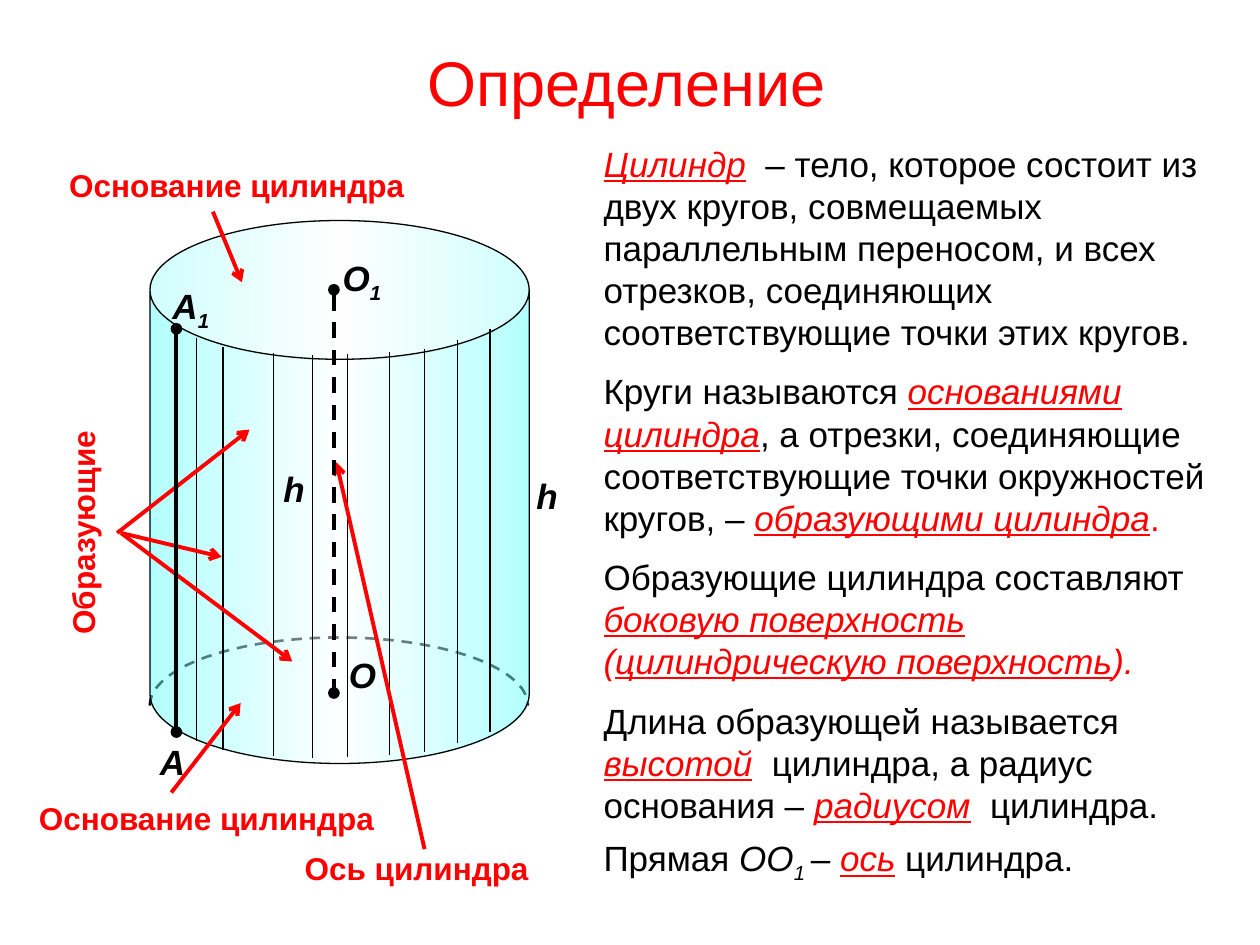
from math import cos, pi, sin

from lxml.etree import SubElement
from pptx import Presentation
from pptx.dml.color import RGBColor
from pptx.enum.dml import MSO_LINE
from pptx.enum.shapes import MSO_CONNECTOR, MSO_SHAPE
from pptx.enum.text import MSO_ANCHOR, MSO_AUTO_SIZE, PP_ALIGN
from pptx.oxml import parse_xml
from pptx.oxml.ns import nsdecls, qn
from pptx.util import Inches, Pt

THEME = {
    "font": "Arial",
    "red": RGBColor(0xFF, 0x00, 0x00),
    "black": RGBColor(0x00, 0x00, 0x00),
    "aqua": "66FFFF",
    "white": "FFFFFF",
    "title": 36, "body": 20, "label": 18,
    "thin": 0.75, "arc": 1.5, "thick": 2.25,
}

# ---- Content ----
TITLE = "Определение"

# Run styles used in the definitions
PLAIN = {}
TERM = {"color": "red", "italic": True, "underline": True}
RED = {"color": "red"}
RED_ITALIC = {"color": "red", "italic": True}
ITALIC = {"italic": True}
SUB_ITALIC = {"italic": True, "sub": True}

DEFINITIONS = [
    [("Цилиндр", TERM),
     ("  – тело, которое состоит из двух кругов, совмещаемых параллельным "
      "переносом, и всех отрезков, соединяющих соответствующие точки этих "
      "кругов.", PLAIN)],
    [("Круги называются ", PLAIN), ("основаниями цилиндра", TERM),
     (", а отрезки, соединяющие соответствующие точки окружностей кругов, – ",
      PLAIN),
     ("образующими цилиндра", TERM), (".", RED)],
    [("Образующие цилиндра составляют ", PLAIN),
     ("боковую поверхность ", TERM), ("(", RED_ITALIC),
     ("цилиндрическую поверхность", TERM), (").", RED_ITALIC)],
    [("Длина образующей называется ", PLAIN), ("высотой", TERM),
     ("  цилиндра, а радиус основания – ", PLAIN), ("радиусом", TERM),
     ("  цилиндра.", PLAIN)],
    [("Прямая ", PLAIN), ("ОО", ITALIC), ("1 ", SUB_ITALIC), ("– ", PLAIN),
     ("ось", TERM), (" цилиндра.", PLAIN)],
]

# Red captions: text, (left, top, width), rotation
CAPTIONS = [
    ("Основание цилиндра", (0.45, 1.27, 2.91), 0),
    ("Основание цилиндра", (0.21, 6.29, 3.15), 0),
    ("Образующие", (-0.32, 3.96, 1.95), 270),
    ("Ось цилиндра", (2.32, 6.69, 2.06), 0),
]

# Point and height names: letter, subscript, (left, top, width)
NAMES = [
    ("O", "1", (2.62, 1.99, 0.52)),
    ("O", "", (2.67, 5.14, 0.42)),
    ("А", "", (1.17, 5.83, 0.42)),
    ("А", "1", (1.27, 2.21, 0.52)),
    ("h", "", (4.16, 3.72, 0.37)),
    ("h", "", (2.15, 3.66, 0.37)),
]

# Pointers from a caption to its part of the cylinder
POINTERS = [
    ((1.69, 1.68), (1.92, 2.24)),
    ((1.36, 6.29), (1.91, 5.58)),
    ((0.96, 4.23), (1.76, 4.42)),
    ((0.96, 4.23), (2.32, 5.25)),
    ((0.93, 4.23), (1.98, 3.41)),
    ((3.37, 6.74), (2.67, 3.67)),
]

# Generatrices: x and top; all share one length
GENERATRICES = [(1.56, 2.68), (1.77, 2.75), (2.17, 2.8), (2.48, 2.82),
                (2.76, 2.81), (3.09, 2.79), (3.37, 2.77), (3.63, 2.7),
                (3.89, 2.61)]
HEIGHT = 3.2
CYLINDER = (1.19, 1.75, 3.01, 4.31)
ARC_CENTRE, ARC_RADII, ARC_STEPS = (2.69, 5.6), (1.5, 0.54), 60


# ---- Helpers ----
def inches(values):
    return [Inches(value) for value in values]


def add_span(para, text, size, color="black", sub=False, **style):
    span = para.add_run()
    span.text = text
    font = span.font
    for name, value in {"name": THEME["font"], "size": Pt(size), **style}.items():
        setattr(font, name, value)
    font.color.rgb = THEME[color]
    if sub:
        span._r.get_or_add_rPr().set("baseline", "-25000")


def add_label(page, place, height, spans, wrap, rotation=0, **style):
    left, top, width = place
    box = page.shapes.add_textbox(*inches((left, top, width, height)))
    box.rotation = rotation
    box.text_frame.word_wrap = wrap
    for text, sub in spans:
        add_span(box.text_frame.paragraphs[0], text, sub=sub, bold=True, **style)


def add_line(page, start, end, color="black", width="thin", dash=None,
             head=None, tail=None):
    line = page.shapes.add_connector(MSO_CONNECTOR.STRAIGHT,
                                     *inches(start + end))
    line.line.color.rgb = THEME[color]
    line.line.width = Pt(THEME[width])
    if dash:
        line.line.dash_style = dash
    properties = line._element.spPr
    for tag, kind in (("a:headEnd", head), ("a:tailEnd", tail)):
        if kind:
            SubElement(properties.find(qn("a:ln")), qn(tag), type=kind)
    SubElement(properties, qn("a:effectLst"))


def fill_gradient(shape, stops):
    marks = "".join(
        f'<a:gs pos="{pos * 1000}"><a:srgbClr val="{color}">'
        f'<a:alpha val="{alpha * 1000}"/></a:srgbClr></a:gs>'
        for pos, color, alpha in stops)
    gradient = parse_xml(f'<a:gradFill {nsdecls("a")} rotWithShape="1">'
                         f'<a:gsLst>{marks}</a:gsLst>'
                         '<a:lin ang="0" scaled="1"/></a:gradFill>')
    shape._element.spPr.find(qn("a:prstGeom")).addnext(gradient)


def place_text(holder, place, anchor):
    holder.left, holder.top, holder.width, holder.height = inches(place)
    frame = holder.text_frame
    for name, value in {"word_wrap": True, "vertical_anchor": anchor,
                        "auto_size": MSO_AUTO_SIZE.NONE}.items():
        setattr(frame, name, value)
    return frame


# ---- Page ----
deck = Presentation()
deck.slide_width, deck.slide_height = inches((10, 7.5))
page = deck.slides.add_slide(deck.slide_layouts[1])

# Title
frame = place_text(page.shapes.title, (0.47, 0.29, 9, 0.71), MSO_ANCHOR.MIDDLE)
frame.paragraphs[0].alignment = PP_ALIGN.CENTER
add_span(frame.paragraphs[0], TITLE, THEME["title"], "red")

# Definitions
frame = place_text(page.placeholders[1], (4.69, 1.08, 5.11, 6.17), MSO_ANCHOR.TOP)
for index, spans in enumerate(DEFINITIONS):
    para = frame.add_paragraph() if index else frame.paragraphs[0]
    para.space_before = Pt(10 if index else 0)
    para.line_spacing = Pt(24)
    settings = para._p.get_or_add_pPr()
    settings.set("marL", "0")
    settings.set("indent", "0")
    SubElement(settings, qn("a:buNone"))
    for text, style in spans:
        add_span(para, text, THEME["body"], **style)

# Hidden edge of the lower base, half an ellipse
angles = [pi * (1 - step / ARC_STEPS) for step in range(ARC_STEPS + 1)]
points = [inches((ARC_CENTRE[0] + ARC_RADII[0] * cos(angle),
                  ARC_CENTRE[1] - ARC_RADII[1] * sin(angle)))
          for angle in angles]
builder = page.shapes.build_freeform(*points[0])
builder.add_line_segments(points[1:], close=False)
arc = builder.convert_to_shape()
arc.fill.background()
arc.line.dash_style = MSO_LINE.DASH

# Cylinder body
cylinder = page.shapes.add_shape(MSO_SHAPE.CAN, *inches(CYLINDER))
cylinder.adjustments[0] = 0.366
fill_gradient(cylinder, [(0, THEME["aqua"], 50), (50, THEME["white"], 49),
                         (100, THEME["aqua"], 50)])
for shape, width in ((arc, "arc"), (cylinder, "thin")):
    shape.shadow.inherit = False
    shape.line.color.rgb = THEME["black"]
    shape.line.width = Pt(THEME[width])

# Generatrices, pointers, axis and marked generatrix
for x, top in GENERATRICES:
    add_line(page, (x, top), (x, top + HEIGHT))
for start, end in POINTERS:
    add_line(page, start, end, "red", "thick", tail="arrow")
for x, top, dash in ((2.65, 2.3, MSO_LINE.DASH), (1.4, 2.61, None)):
    add_line(page, (x, top), (x, top + HEIGHT), width="thick", dash=dash,
             head="oval", tail="oval")

# Captions and names
for text, place, rotation in CAPTIONS:
    add_label(page, place, 0.4, [(text, False)], True, rotation,
              size=THEME["label"], color="red")
for letter, subscript, place in NAMES:
    spans = [(letter, False)] + ([(subscript, True)] if subscript else [])
    add_label(page, place, 0.44, spans, False, size=THEME["body"], italic=True)

deck.save("out.pptx")
